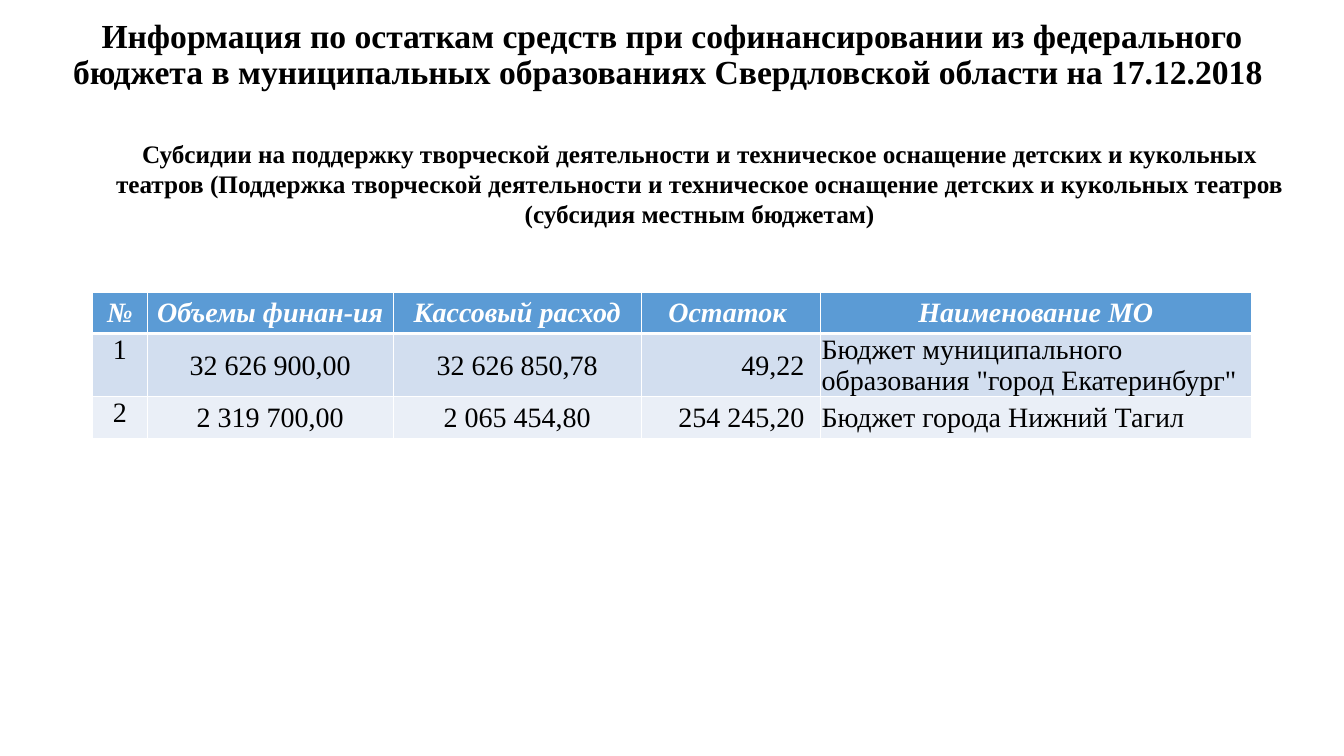
from lxml import etree
from pptx import Presentation
from pptx.dml.color import RGBColor
from pptx.enum import text
from pptx.oxml.ns import qn
from pptx.util import Inches, Pt

FONT = "Times New Roman"
COLORS = {
    "ink": "000000",
    "white": "FFFFFF",
    "header": "5B9BD5",
    "odd": "D2DEEF",
    "even": "EAEFF7",
}
CENTER, LEFT, RIGHT = text.PP_ALIGN.CENTER, text.PP_ALIGN.LEFT, text.PP_ALIGN.RIGHT
TOP, MIDDLE = text.MSO_ANCHOR.TOP, text.MSO_ANCHOR.MIDDLE

HEADING = (
    "Информация по остаткам средств при софинансировании из федерального бюджета "
    "в муниципальных образованиях Свердловской области на 17.12.2018 "
)
SUBSIDY = (
    "Субсидии на поддержку творческой деятельности и техническое оснащение детских "
    "и кукольных театров (Поддержка творческой деятельности и техническое оснащение "
    "детских и кукольных театров (субсидия местным бюджетам)"
)
BALANCES = [
    ["№", "Объемы финан-ия", "Кассовый расход", "Остаток ", "Наименование МО"],
    ["1", "32 626 900,00", "32 626 850,78", "49,22",
     'Бюджет муниципального образования "город Екатеринбург"'],
    ["2", "2 319 700,00", "2 065 454,80", "254 245,20", "Бюджет города Нижний Тагил"],
]
WIDTHS = [0.54, 2.44, 2.46, 1.78, 4.27]
ROW_HEIGHT = 0.41
BODY_ALIGN = [CENTER, CENTER, CENTER, RIGHT, LEFT]


def apply(target, values):
    for name, value in values.items():
        setattr(target, name, value)


def write(frame, wording, size, color="ink", align=CENTER, spacing=1.0, **style):
    paragraph = frame.paragraphs[0]
    apply(paragraph, {"alignment": align, "line_spacing": spacing})
    run = paragraph.add_run()
    run.text = wording
    apply(run.font, {"name": FONT, "size": Pt(size), **style})
    run.font.color.rgb = RGBColor.from_string(COLORS[color])


def place(shape, left, top, width, height):
    apply(shape, {"left": Inches(left), "top": Inches(top),
                  "width": Inches(width), "height": Inches(height)})


def add_heading(slide):
    heading = slide.shapes.title
    place(heading, 0.38, 0.22, 12.57, 0.66)
    apply(heading.text_frame, {"word_wrap": True, "vertical_anchor": MIDDLE,
                               "auto_size": text.MSO_AUTO_SIZE.NONE})
    write(heading.text_frame, HEADING, 24, spacing=0.9, bold=True)


def add_subsidy(slide):
    subsidy = slide.shapes.add_textbox(
        Inches(0.92), Inches(1.32), Inches(12.04), Inches(1.01))
    apply(subsidy.text_frame, {"word_wrap": True,
                               "auto_size": text.MSO_AUTO_SIZE.SHAPE_TO_FIT_TEXT})
    write(subsidy.text_frame, SUBSIDY, 18, bold=True)


def set_borders(cell, widths):
    properties = cell._tc.get_or_add_tcPr()
    for side, width in widths.items():
        line = etree.SubElement(properties, qn(f"a:ln{side}"), w=str(Pt(width)))
        fill = etree.SubElement(line, qn("a:solidFill"))
        etree.SubElement(fill, qn("a:srgbClr"), val=COLORS["white"])


def format_cell(cell, wording, row, column):
    is_header = row == 0
    is_balance = column == 3 and not is_header
    apply(cell, {
        "margin_left": Inches(0.01),
        "margin_right": Inches(0.16 if is_balance else 0.01),
        "margin_top": Inches(0.01),
        "margin_bottom": 0,
        "vertical_anchor": TOP if column == 0 and not is_header else MIDDLE,
    })
    set_borders(cell, {"L": 1, "R": 1, "T": 3 if row == 1 else 1,
                       "B": 3 if is_header else 1})
    cell.fill.solid()
    shade = "header" if is_header else "odd" if row % 2 else "even"
    cell.fill.fore_color.rgb = RGBColor.from_string(COLORS[shade])
    write(cell.text_frame, wording, 20,
          color="white" if is_header else "ink",
          align=CENTER if is_header else BODY_ALIGN[column],
          bold=is_header, italic=is_header)


def add_balances(slide):
    balances = slide.shapes.add_table(
        len(BALANCES), len(WIDTHS), Inches(0.92), Inches(2.9),
        Inches(sum(WIDTHS)), Inches(ROW_HEIGHT * len(BALANCES))).table
    for column, width in zip(balances.columns, WIDTHS):
        column.width = Inches(width)
    for row, entries in enumerate(BALANCES):
        balances.rows[row].height = Inches(ROW_HEIGHT)
        for column, wording in enumerate(entries):
            format_cell(balances.cell(row, column), wording, row, column)


def main():
    deck = Presentation()
    apply(deck, {"slide_width": Inches(13.33), "slide_height": Inches(7.5)})
    slide = deck.slides.add_slide(deck.slide_layouts[5])
    add_heading(slide)
    add_balances(slide)
    add_subsidy(slide)
    deck.save("out.pptx")


if __name__ == "__main__":
    main()
